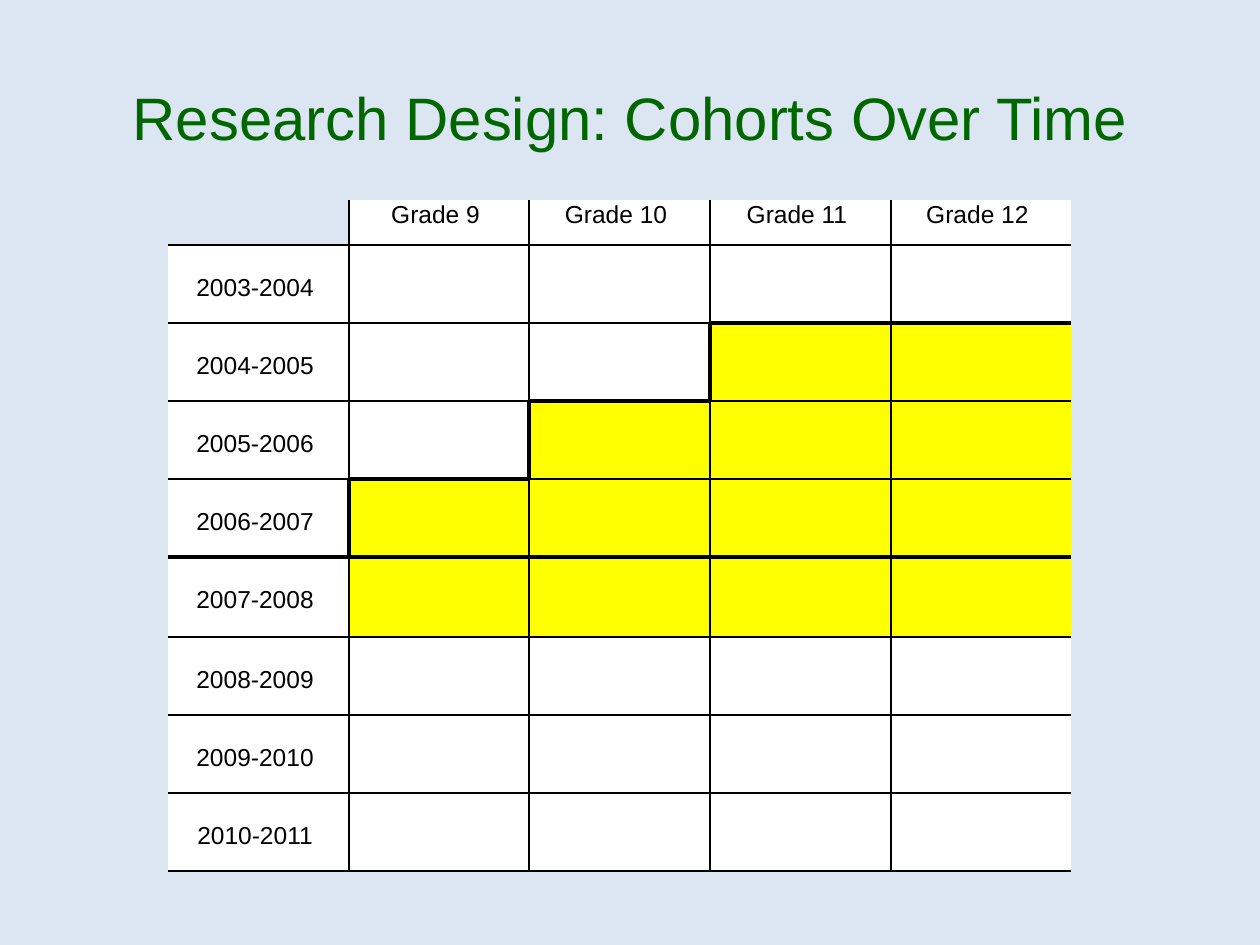
from dataclasses import dataclass

from lxml import etree
from pptx import Presentation
from pptx import util as u
from pptx.dml.color import RGBColor
from pptx.enum import text
from pptx.oxml import ns

EMU_PER_PX = 914400 / 126
FONT = "Arial"
BACKGROUND = RGBColor(0xDC, 0xE6, 0xF2)
GREEN = RGBColor(0x00, 0x66, 0x00)
YELLOW = RGBColor(0xFF, 0xFF, 0x00)
WHITE = RGBColor(0xFF, 0xFF, 0xFF)
BLACK = RGBColor(0x00, 0x00, 0x00)

COLS = [181, 180, 181, 181, 180]
ROWS = [45, 78, 78, 78, 78, 80, 78, 78, 78]
FIRST_YEAR = 2003
FIRST_GRADE = 9
COHORT_START, COHORT_END = 2, 5
DIVIDER_ROW = 5
YEAR_INSET = 29


@dataclass(frozen=True)
class GridCell:
    row: int
    col: int

    @property
    def studied(self) -> bool:
        return (self.col > 0 and COHORT_START <= self.row <= COHORT_END
                and self.row + self.col >= 5)

    @property
    def label(self) -> str:
        if self.row and not self.col:
            year = FIRST_YEAR + self.row - 1
            return f"{year}-{year + 1} "
        if self.col and not self.row:
            return f"Grade {FIRST_GRADE + self.col - 1} "
        return ""

    @property
    def fill(self) -> RGBColor:
        if self.row == self.col == 0:
            return BACKGROUND
        return YELLOW if self.studied else WHITE

    @property
    def left(self) -> float:
        if self.col in (0, len(COLS)):
            return 0
        neighbour = GridCell(self.row, self.col - 1)
        starts = self.studied and not neighbour.studied
        return 3 if starts and self.row < DIVIDER_ROW else 1

    @property
    def top(self) -> float:
        if self.row == 0:
            return 0
        if self.row == DIVIDER_ROW:
            return 2.25
        return 3 if self.studied and not GridCell(self.row - 1, self.col).studied else 1

    @property
    def borders(self) -> dict[str, float]:
        return {"lnL": self.left, "lnR": GridCell(self.row, self.col + 1).left,
                "lnT": self.top, "lnB": GridCell(self.row + 1, self.col).top}


def px(n: int) -> u.Emu:
    return u.Emu(round(n * EMU_PER_PX))


def add_run(p, words: str, size: float, color: RGBColor) -> None:
    p.alignment = text.PP_ALIGN.CENTER
    r = p.add_run()
    r.text = words
    r.font.name = FONT
    r.font.size = u.Pt(size)
    r.font.color.rgb = color


def set_borders(cell, borders: dict[str, float]) -> None:
    props = cell._tc.get_or_add_tcPr()
    for i, (tag, width) in enumerate(borders.items()):
        ln = etree.Element(ns.qn(f"a:{tag}"), w=str(u.Pt(width)))
        if width:
            fill = etree.SubElement(ln, ns.qn("a:solidFill"))
            etree.SubElement(fill, ns.qn("a:srgbClr"), val=str(BLACK))
        else:
            etree.SubElement(ln, ns.qn("a:noFill"))
        props.insert(i, ln)


def draw_cell(cell, item: GridCell) -> None:
    cell.margin_left = cell.margin_right = cell.margin_top = px(1)
    cell.margin_bottom = 0
    cell.fill.solid()
    cell.fill.fore_color.rgb = item.fill
    set_borders(cell, item.borders)
    if item.label:
        if item.row:
            cell.margin_top = px(YEAR_INSET)
        add_run(cell.text_frame.paragraphs[0], item.label, 14, BLACK)


def add_title(slide) -> None:
    sp = slide.shapes.title
    sp.left, sp.top, sp.width, sp.height = px(63), px(38), px(1134), px(158)
    tf = sp.text_frame
    tf.vertical_anchor = text.MSO_ANCHOR.MIDDLE
    add_run(tf.paragraphs[0], "Research Design: Cohorts Over Time", 34.2, GREEN)


def add_cohort_table(slide) -> None:
    frame = slide.shapes.add_table(len(ROWS), len(COLS), px(168), px(200),
                                   px(sum(COLS)), px(sum(ROWS)))
    table = frame.table
    table.first_row = table.horz_banding = False
    for column, width in zip(table.columns, COLS):
        column.width = px(width)
    for r, height in enumerate(ROWS):
        table.rows[r].height = px(height)
        for c in range(len(COLS)):
            draw_cell(table.cell(r, c), GridCell(r, c))


def main() -> None:
    """Build the cohort design slide."""
    prs = Presentation()
    prs.slide_width, prs.slide_height = px(1260), px(945)
    slide = prs.slides.add_slide(prs.slide_layouts[5])
    slide.background.fill.solid()
    slide.background.fill.fore_color.rgb = BACKGROUND
    add_title(slide)
    add_cohort_table(slide)
    prs.save("out.pptx")


if __name__ == "__main__":
    main()
